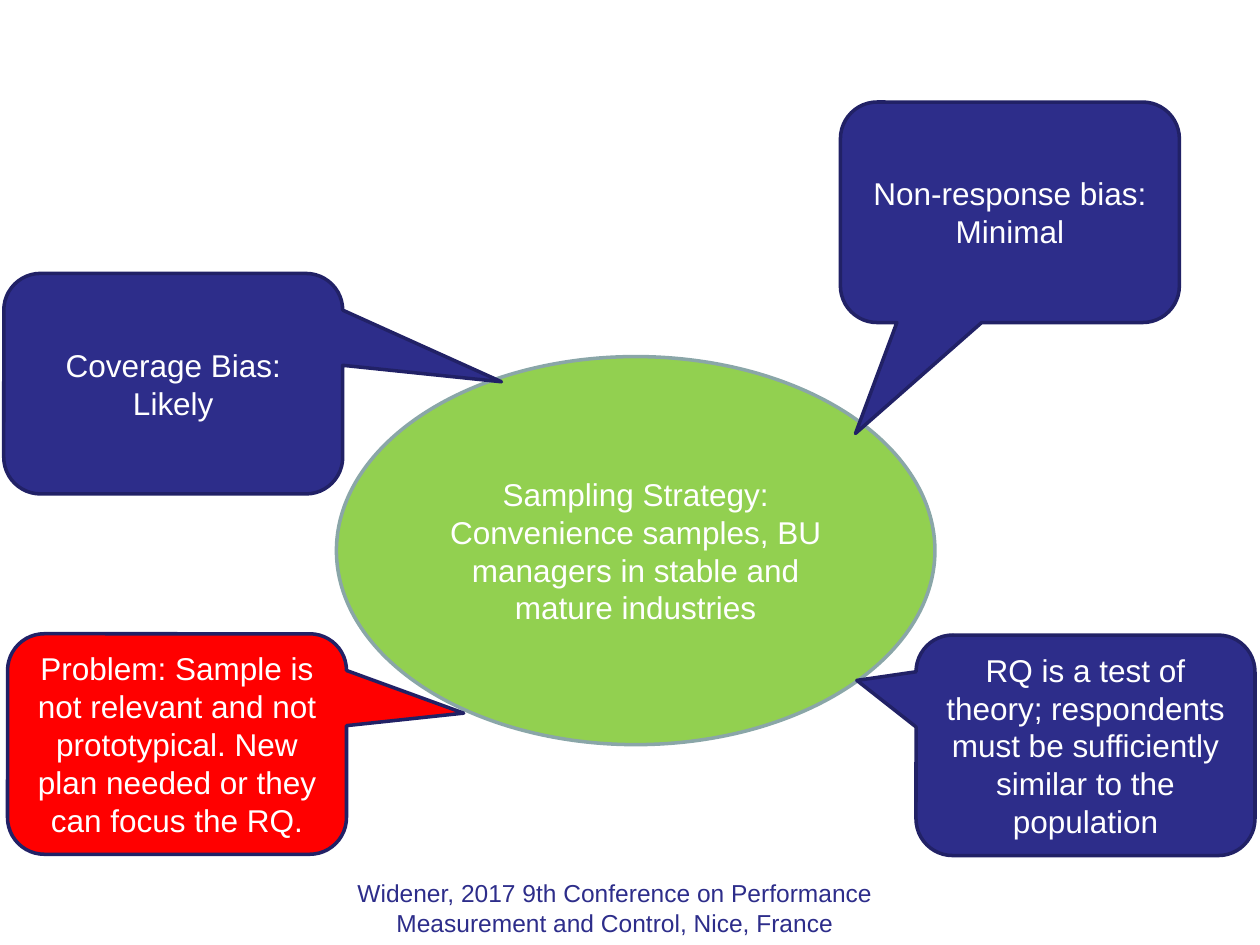
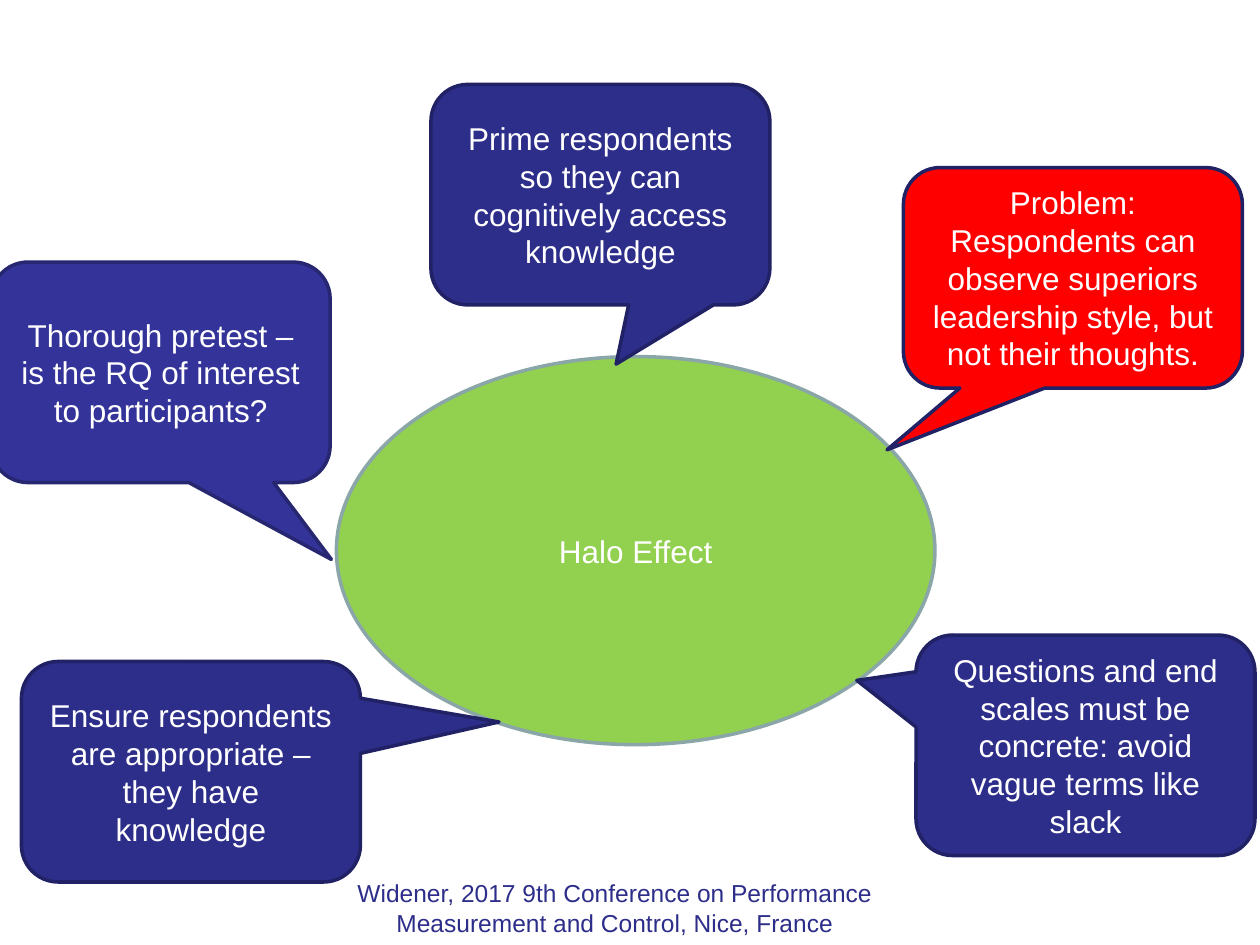
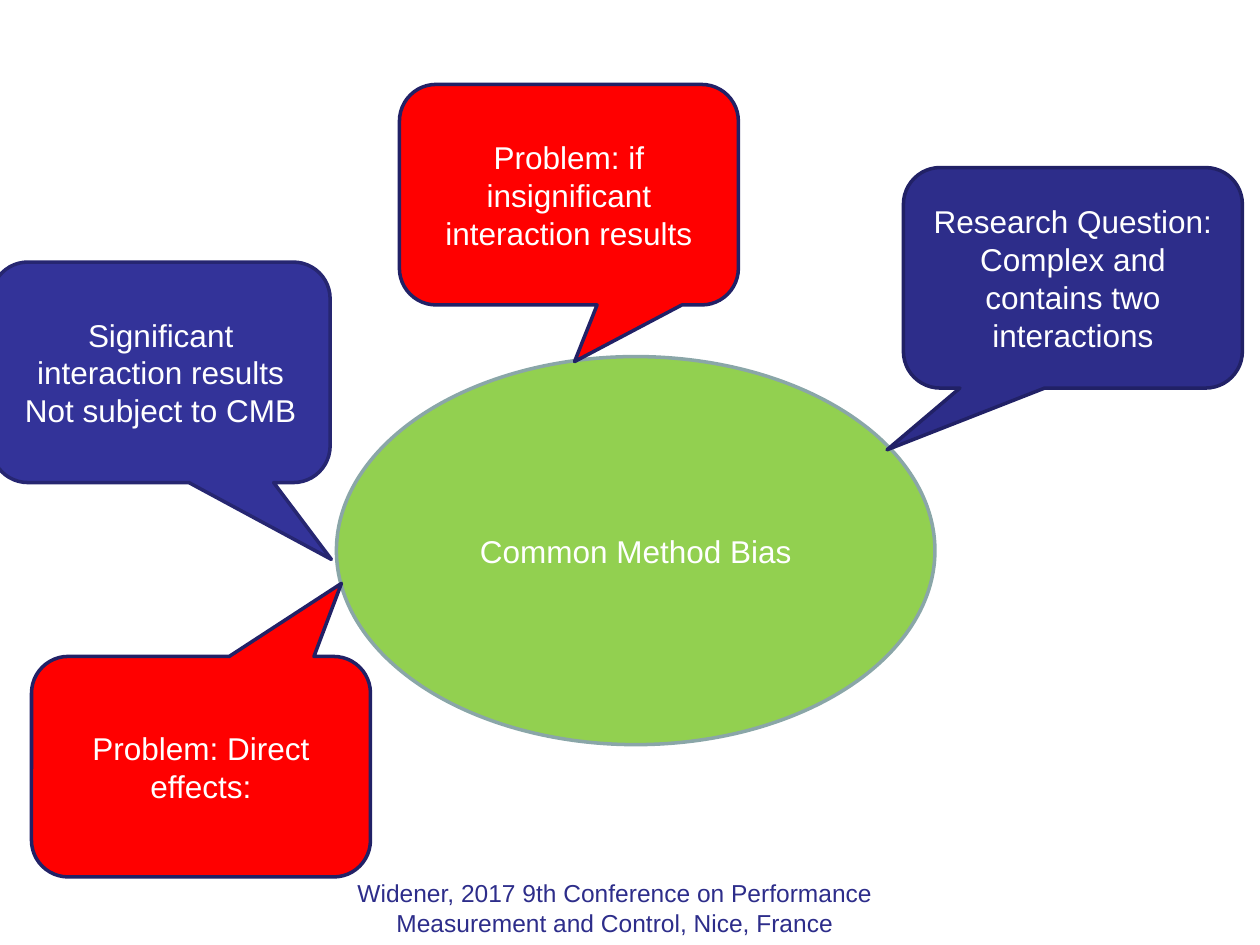
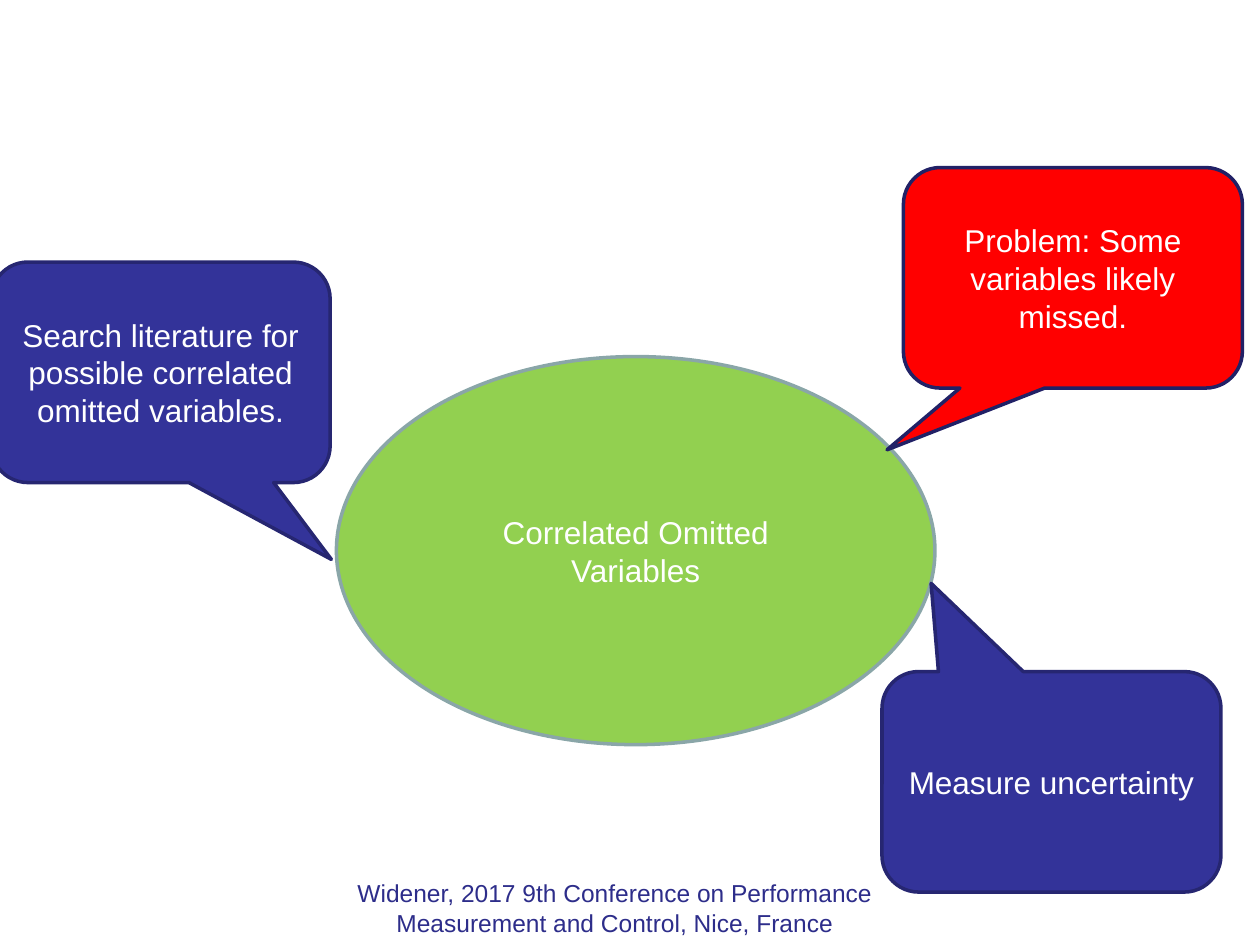
from pptx import Presentation
from pptx.dml.color import RGBColor
from pptx.enum.shapes import MSO_SHAPE
from pptx.enum.text import MSO_ANCHOR, PP_ALIGN
from pptx.util import Inches, Pt

ELLIPSE = MSO_SHAPE.OVAL
CALLOUT = MSO_SHAPE.ROUNDED_RECTANGULAR_CALLOUT
CENTER = PP_ALIGN.CENTER
MIDDLE = MSO_ANCHOR.MIDDLE

FONT = "Arial"
WHITE = "FFFFFF"
NAVY = "2D2D8A"
FOOTER = "Widener, 2017 9th Conference on Performance Measurement and Control, Nice, France"

# Fill and line colours
TOPIC = ("92D050", "8AA6A8")
POINT = (NAVY, "212166")
ACCENT = ("333399", "262671")
PROBLEM = ("FF0000", "212166")

CALLOUT_WIDTH, CALLOUT_HEIGHT = 2.69, 1.75

# Left, top, and the x and y of the pointer's tip, in inches
UPPER_LEFT = (-0.07, 2.08, 2.63, 4.44)
UPPER_RIGHT = (7.17, 1.33, 7.04, 3.57)
LOWER_RIGHT = (7.27, 5.04, 6.8, 5.4)

# Each slide: central topic, then callouts as (place, colours, paragraphs)
SLIDES = [
    ("Sampling Strategy: Convenience samples, BU managers in stable and mature industries", [
        ((6.67, 0.81, 6.79, 3.44), POINT, ["Non-response bias: Minimal"]),
        (LOWER_RIGHT, POINT,
         ["RQ is a test of theory; respondents must be sufficiently similar to the population"]),
        ((0.03, 2.17, 3.98, 3.03), POINT, ["Coverage Bias: Likely"]),
        ((0.06, 5.03, 3.68, 5.66), PROBLEM,
         ["Problem: Sample is not relevant and not prototypical. "
          "New plan needed or they can focus the RQ."]),
    ]),
    ("Halo Effect", [
        (UPPER_RIGHT, PROBLEM,
         ["Problem: Respondents can observe superiors leadership style, but not their thoughts."]),
        (UPPER_LEFT, ACCENT, ["Thorough pretest – is the RQ of interest to participants?"]),
        (LOWER_RIGHT, POINT,
         ["Questions and end scales must be concrete: avoid vague terms like slack"]),
        ((0.17, 5.25, 3.96, 5.73), POINT,
         ["Ensure respondents are appropriate – they have knowledge"]),
        ((3.42, 0.67, 4.89, 2.89), POINT,
         ["Prime respondents so they can cognitively access knowledge"]),
    ]),
    ("Common Method Bias", [
        (UPPER_RIGHT, POINT, ["Research Question:", "Complex and contains two interactions"]),
        (UPPER_LEFT, ACCENT, ["Significant interaction results Not subject to CMB"]),
        ((3.17, 0.67, 4.56, 2.87), PROBLEM, ["Problem: if insignificant interaction results"]),
        ((0.25, 5.21, 2.71, 4.63), PROBLEM, ["Problem: Direct effects:"]),
    ]),
    ("Correlated Omitted Variables", [
        (UPPER_LEFT, ACCENT, ["Search literature for possible correlated omitted variables."]),
        (UPPER_RIGHT, PROBLEM, ["Problem: Some variables likely missed."]),
        ((7, 5.33, 7.39, 4.63), ACCENT, ["Measure uncertainty"]),
    ]),
]


def write_text(shape, lines, size, color):
    """Fill a shape with centred, wrapped paragraphs."""
    frame = shape.text_frame
    frame.word_wrap = True
    for index, line in enumerate(lines):
        paragraph = frame.add_paragraph() if index else frame.paragraphs[0]
        paragraph.alignment = CENTER
        run = paragraph.add_run()
        run.text = line
        run.font.name = FONT
        run.font.size = Pt(size)
        run.font.color.rgb = RGBColor.from_string(color)


def add_bubble(slide, kind, box, colors, lines):
    """Add a filled, outlined shape with white text in its middle."""
    shape = slide.shapes.add_shape(kind, *map(Inches, box))
    fill_color, line_color = colors
    shape.shadow.inherit = False
    shape.fill.solid()
    shape.fill.fore_color.rgb = RGBColor.from_string(fill_color)
    shape.line.color.rgb = RGBColor.from_string(line_color)
    shape.line.width = Pt(2)
    shape.text_frame.vertical_anchor = MIDDLE
    write_text(shape, lines, 18, WHITE)
    return shape


presentation = Presentation()
presentation.slide_width = Inches(10)
presentation.slide_height = Inches(7.5)
blank_layout = presentation.slide_layouts[6]

for topic, callouts in SLIDES:
    slide = presentation.slides.add_slide(blank_layout)
    footer = slide.shapes.add_textbox(Inches(2.42), Inches(6.92), Inches(4.92), Inches(0.35))
    write_text(footer, [FOOTER], 14, NAVY)
    add_bubble(slide, ELLIPSE, (2.67, 2.83, 4.75, 3.08), TOPIC, [topic])

    for (left, top, tip_x, tip_y), colors, lines in callouts:
        box = (left, top, CALLOUT_WIDTH, CALLOUT_HEIGHT)
        callout = add_bubble(slide, CALLOUT, box, colors, lines)
        # The tip is set as a share of the size, measured from the centre
        callout.adjustments[0] = (tip_x - left) / CALLOUT_WIDTH - 0.5
        callout.adjustments[1] = (tip_y - top) / CALLOUT_HEIGHT - 0.5

presentation.save("out.pptx")
